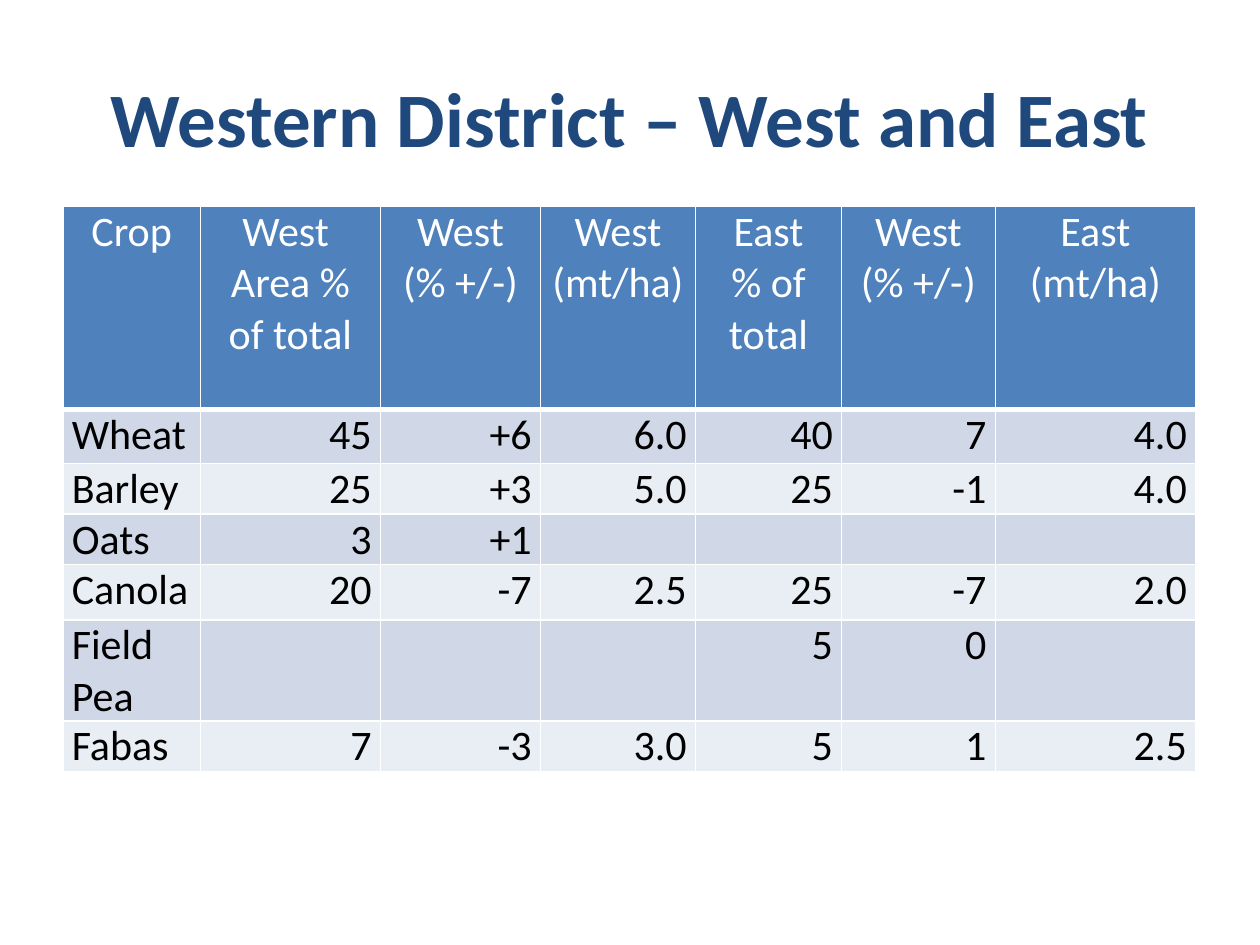
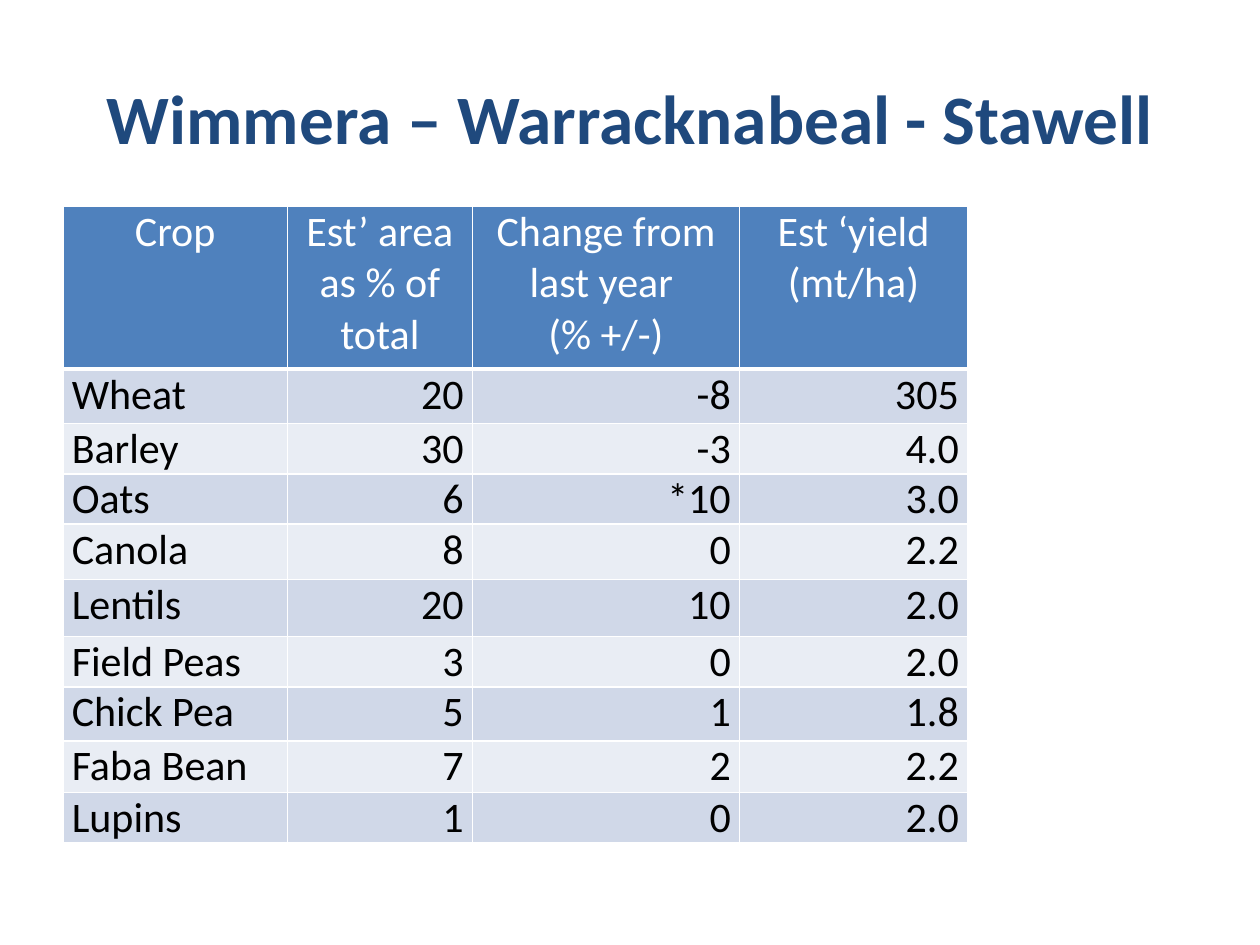
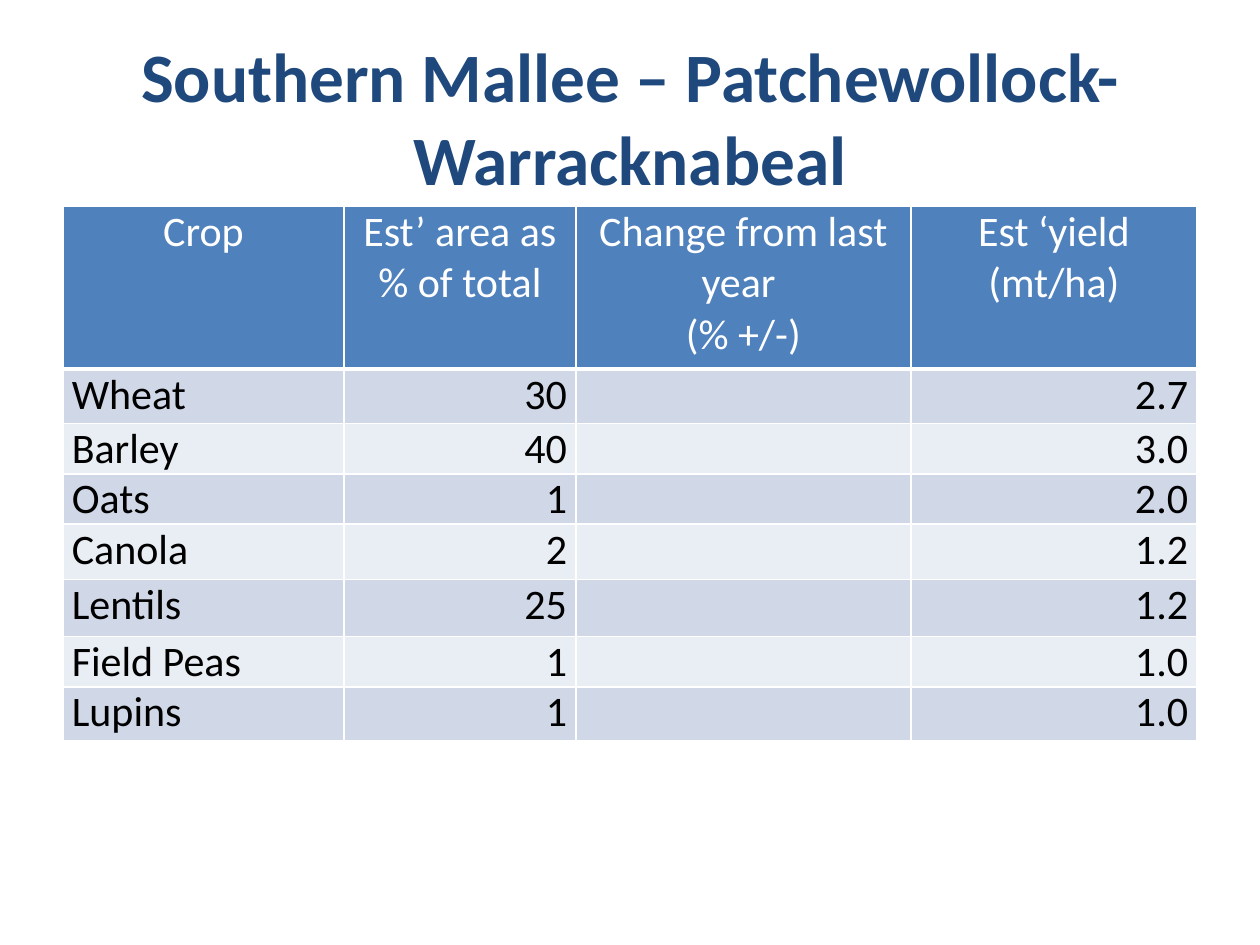
from lxml.etree import SubElement
from pptx import Presentation
from pptx.dml.color import RGBColor
from pptx.enum.text import MSO_ANCHOR as ANCHOR, PP_ALIGN as ALIGN
from pptx.oxml.ns import qn
from pptx.util import Inches, Pt

COLORS = {
    "title": "1F497D",
    "header": "4F81BD",
    "band_dark": "D0D8E8",
    "band_light": "E9EDF4",
    "line": "FFFFFF",
    "header_text": "FFFFFF",
    "body_text": "000000",
}
FONT = "Calibri"
LEFT = 0.5
HEADER_HEIGHT = 1.29
ROW_HEIGHTS = [0.43, 0.37, 0.35, 0.44, 0.45, 0.39, 0.43, 0.41, 0.39]


class CropDeck:
    """Holds the shared style and the current slide."""

    def __init__(self):
        self.prs = Presentation()
        self.prs.slide_width = Inches(10)
        self.prs.slide_height = Inches(7.5)
        self.slide = None

    def add_slide(self):
        self.slide = self.prs.slides.add_slide(self.prs.slide_layouts[6])

    def set_text(self, tf, text, size, color, align, bold=False):
        """Fill a text frame, one paragraph per line of text."""
        tf.text = text
        for p in tf.paragraphs:
            p.alignment = align
            for r in p.runs:
                r.font.name = FONT
                r.font.size = Pt(size)
                r.font.bold = bold
                r.font.color.rgb = RGBColor.from_string(COLORS[color])

    def title(self, text, size):
        sp = self.slide.shapes.add_textbox(
            Inches(LEFT), Inches(0.3), Inches(9), Inches(1.25))
        tf = sp.text_frame
        tf.word_wrap = True
        tf.vertical_anchor = ANCHOR.MIDDLE
        self.set_text(tf, text, size, "title", ALIGN.CENTER, bold=True)

    def borders(self, cell, top, bottom):
        """Draw the four cell edges; widths are in points."""
        tc_pr = cell._tc.get_or_add_tcPr()
        for edge, width in (("L", 1), ("R", 1), ("T", top), ("B", bottom)):
            ln = SubElement(tc_pr, qn(f"a:ln{edge}"), w=str(Pt(width)))
            fill = SubElement(ln, qn("a:solidFill"))
            SubElement(fill, qn("a:srgbClr"), val=COLORS["line"])

    def cell(self, cell, text, row, col):
        cell.margin_left = cell.margin_right = Inches(0.07)
        cell.margin_top = cell.margin_bottom = 0
        self.borders(cell, top=3 if row == 1 else 1, bottom=3 if row == 0 else 1)
        if row == 0:
            fill, color, align = "header", "header_text", ALIGN.CENTER
        else:
            fill = "band_dark" if row % 2 else "band_light"
            color = "body_text"
            align = ALIGN.RIGHT if col else ALIGN.LEFT
        cell.fill.solid()
        cell.fill.fore_color.rgb = RGBColor.from_string(COLORS[fill])
        self.set_text(cell.text_frame, text, 24, color, align)

    def table(self, header, rows, widths, header_height=HEADER_HEIGHT):
        heights = [header_height] + ROW_HEIGHTS[:len(rows)]
        table = self.slide.shapes.add_table(
            len(heights), len(widths), Inches(LEFT), Inches(1.64),
            Inches(sum(widths)), Inches(sum(heights))).table
        for column, width in zip(table.columns, widths):
            column.width = Inches(width)
        for table_row, height in zip(table.rows, heights):
            table_row.height = Inches(height)
        for i, values in enumerate([header] + rows):
            for j, text in enumerate(values):
                self.cell(table.cell(i, j), text, i, j)


DISTRICT_HEADER = ["Crop", "West \vArea % of total", "West\n(% +/-)", "West\n(mt/ha)",
                   "East\n% of total", "West\n(% +/-)", "East\n(mt/ha)"]
REGION_HEADER = ["Crop", "Est’ area as % of total",
                 "Change from last year \n(% +/-)", "Est ‘yield\n(mt/ha)"]


def main():
    deck = CropDeck()

    # Western District: both halves side by side
    deck.add_slide()
    deck.title("Western District – West and East", 44)
    deck.table(DISTRICT_HEADER, [
        ["Wheat", "45", "+6", "6.0", "40", "7", "4.0"],
        ["Barley", "25", "+3", "5.0", "25", "-1", "4.0"],
        ["Oats", "3", "+1", "", "", "", ""],
        ["Canola", "20", "-7", "2.5", "25", "-7", "2.0"],
        ["Field Pea", "", "", "", "5", "0", ""],
        ["Fabas", "7", "-3", "3.0", "5", "1", "2.5"],
    ], [1.09, 1.43, 1.27, 1.23, 1.16, 1.22, 1.59], header_height=1.61)

    # Wimmera
    deck.add_slide()
    deck.title("Wimmera – Warracknabeal - Stawell", 39.6)
    deck.table(REGION_HEADER, [
        ["Wheat", "20", "-8", "305"],
        ["Barley", "30", "-3", "4.0"],
        ["Oats", "6", "*10", "3.0"],
        ["Canola", "8", "0", "2.2"],
        ["Lentils", "20", "10", "2.0"],
        ["Field Peas", "3", "0", "2.0"],
        ["Chick Pea", "5", "1", "1.8"],
        ["Faba Bean", "7", "2", "2.2"],
        ["Lupins", "1", "0", "2.0"],
    ], [1.78, 1.47, 2.12, 1.81])

    # Southern Mallee: no change figures
    deck.add_slide()
    deck.title("Southern Mallee – Patchewollock-Warracknabeal", 39.6)
    deck.table(REGION_HEADER, [
        ["Wheat", "30", "", "2.7"],
        ["Barley", "40", "", "3.0"],
        ["Oats", "1", "", "2.0"],
        ["Canola", "2", "", "1.2"],
        ["Lentils", "25", "", "1.2"],
        ["Field Peas", "1", "", "1.0"],
        ["Lupins", "1", "", "1.0"],
    ], [2.23, 1.84, 2.66, 2.27])

    deck.prs.save("out.pptx")


if __name__ == "__main__":
    main()
